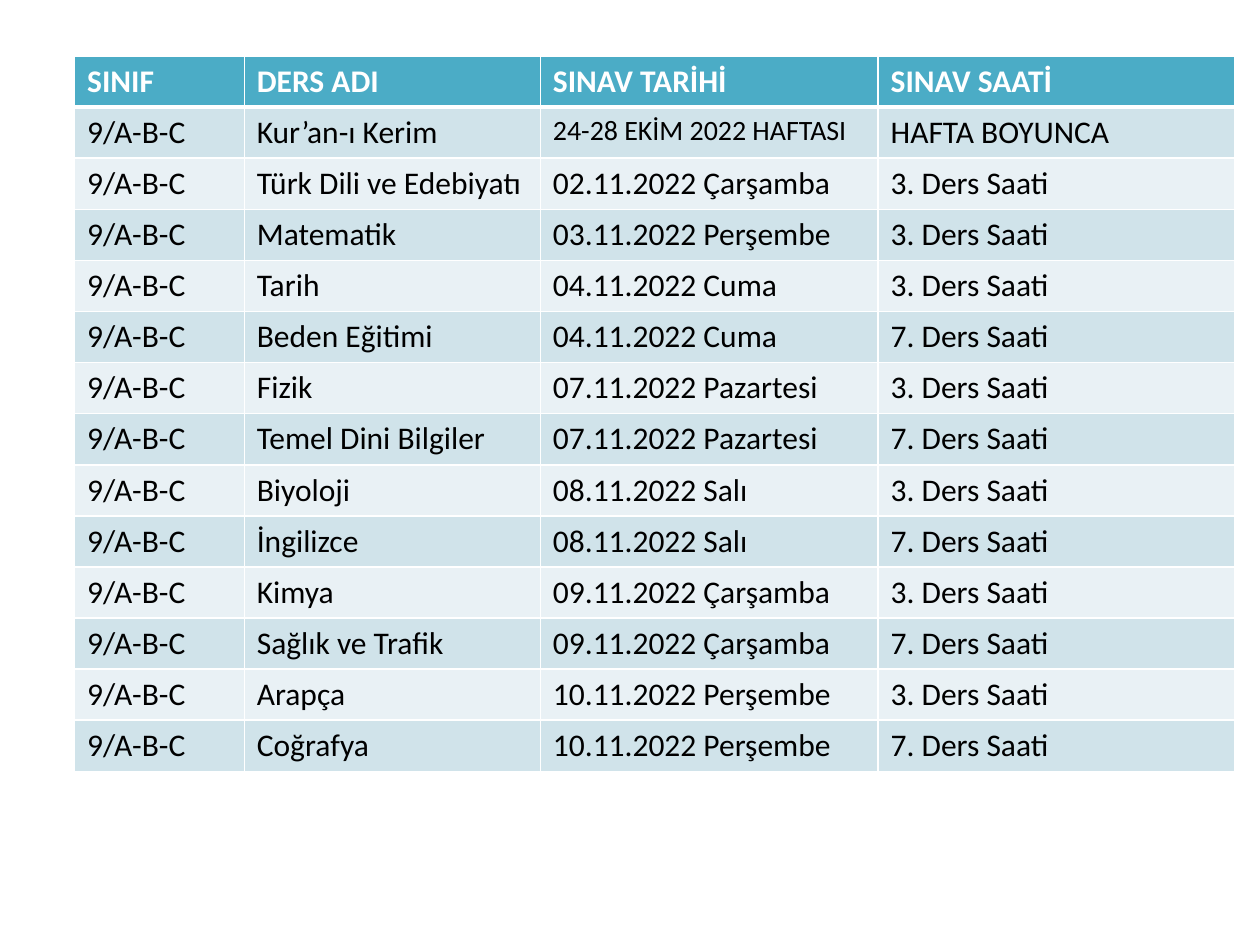
from lxml import etree
from pptx import Presentation
from pptx.dml.color import RGBColor
from pptx.oxml.ns import qn
from pptx.util import Pt

CLASSES = "9/A-B-C"
HEADINGS = ("SINIF", "DERS ADI", "SINAV TARİHİ", "SINAV SAATİ")
EXAMS = [
    ("Kur’an-ı Kerim", "24-28 EKİM 2022 HAFTASI", "HAFTA BOYUNCA"),
    ("Türk Dili ve Edebiyatı", "02.11.2022 Çarşamba", "3. Ders Saati"),
    ("Matematik", "03.11.2022 Perşembe", "3. Ders Saati"),
    ("Tarih", "04.11.2022 Cuma", "3. Ders Saati"),
    ("Beden Eğitimi", "04.11.2022 Cuma", "7. Ders Saati"),
    ("Fizik", "07.11.2022 Pazartesi", "3. Ders Saati"),
    ("Temel Dini Bilgiler", "07.11.2022 Pazartesi", "7. Ders Saati"),
    ("Biyoloji", "08.11.2022 Salı", "3. Ders Saati"),
    ("İngilizce", "08.11.2022 Salı", "7. Ders Saati"),
    ("Kimya", "09.11.2022 Çarşamba", "3. Ders Saati"),
    ("Sağlık ve Trafik", "09.11.2022 Çarşamba", "7. Ders Saati"),
    ("Arapça", "10.11.2022 Perşembe", "3. Ders Saati"),
    ("Coğrafya", "10.11.2022 Perşembe", "7. Ders Saati"),
]
SMALL_TEXT = "24-28 EKİM 2022 HAFTASI"

LEFT, TOP = 42.6, 32
COLUMN_WIDTHS = (97, 169.2, 193, 203.8)
ROW_HEIGHT = 29.2
HEADER_FILL = "4BACC6"
BAND_FILLS = ("D0E3EA", "E9F1F5")
WHITE, BLACK = "FFFFFF", "000000"


def color(value):
    return RGBColor.from_string(value)


def write_text(cell, text, *, size, ink, bold):
    span = cell.text_frame.paragraphs[0].add_run()
    span.text = text
    span.font.name = "Calibri"
    span.font.size = Pt(size)
    span.font.bold = bold
    span.font.color.rgb = color(ink)


def add_borders(cell, top, bottom):
    properties = cell._tc.get_or_add_tcPr()
    for side, width in (("L", 1), ("R", 1), ("T", top), ("B", bottom)):
        line = etree.SubElement(properties, qn(f"a:ln{side}"), w=str(Pt(width)))
        fill = etree.SubElement(line, qn("a:solidFill"))
        etree.SubElement(fill, qn("a:srgbClr"), val=WHITE)


def fill_cell(cell, fill):
    cell.fill.solid()
    cell.fill.fore_color.rgb = color(fill)


def main():
    deck = Presentation()
    deck.slide_width, deck.slide_height = Pt(720), Pt(540)
    page = deck.slides.add_slide(deck.slide_layouts[6])

    rows = [HEADINGS] + [(CLASSES, *exam) for exam in EXAMS]
    table = page.shapes.add_table(
        len(rows), len(HEADINGS), Pt(LEFT), Pt(TOP),
        Pt(sum(COLUMN_WIDTHS)), Pt(ROW_HEIGHT * len(rows)),
    ).table
    for column, width in zip(table.columns, COLUMN_WIDTHS):
        column.width = Pt(width)

    for index, texts in enumerate(rows):
        table.rows[index].height = Pt(ROW_HEIGHT)
        heading = index == 0
        fill = HEADER_FILL if heading else BAND_FILLS[(index - 1) % 2]
        for cell, text in zip(table.rows[index].cells, texts):
            add_borders(cell, top=3 if index == 1 else 1, bottom=3 if heading else 1)
            fill_cell(cell, fill)
            write_text(cell, text, size=16 if text == SMALL_TEXT else 18,
                       ink=WHITE if heading else BLACK, bold=heading)

    deck.save("out.pptx")


if __name__ == "__main__":
    main()
